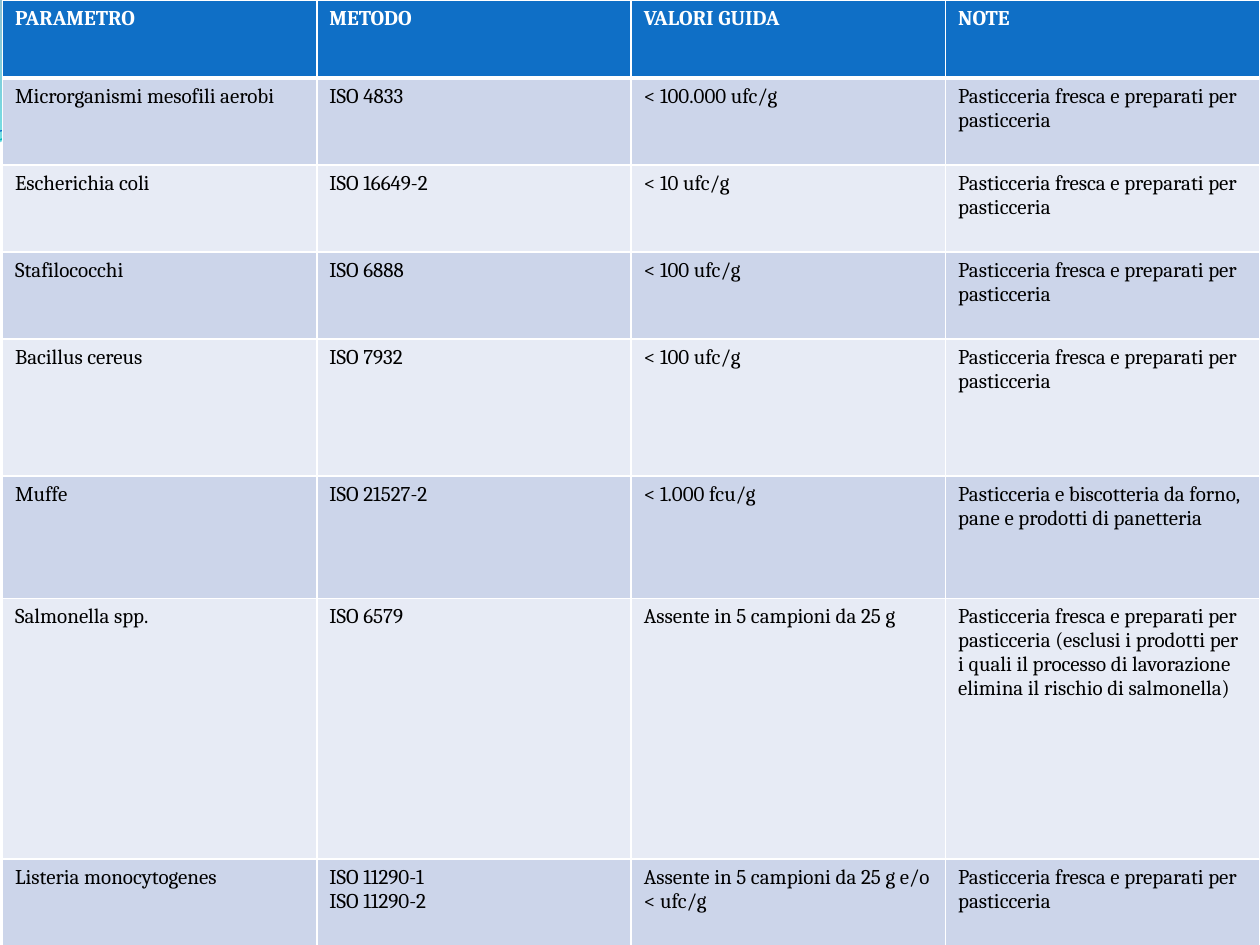
import dataclasses

import lxml.etree
import pptx
import pptx.dml.color
import pptx.oxml.ns
import pptx.util

Inches = pptx.util.Inches
qn = pptx.oxml.ns.qn


@dataclasses.dataclass(frozen=True)
class Theme:
    font: str = "Cambria"
    text_size: int = 12
    white: str = "FFFFFF"
    black: str = "000000"
    header: str = "0F6FC6"
    bands: tuple = ("CCD5EA", "E7EBF5")
    turquoise: str = "0AB8BF"
    thin: int = 1
    thick: int = 3


THEME = Theme()
FRESH = "Pasticceria fresca e preparati per pasticceria"
HEADINGS = ("PARAMETRO", "METODO", "VALORI GUIDA", "NOTE")
LIMITS = (
    ("Microrganismi mesofili aerobi", "ISO 4833", "< 100.000 ufc/g", FRESH),
    ("Escherichia coli", "ISO 16649-2", "< 10 ufc/g", FRESH),
    ("Stafilococchi", "ISO 6888", "< 100 ufc/g", FRESH),
    ("Bacillus cereus", "ISO 7932", "< 100 ufc/g", FRESH),
    ("Muffe", "ISO 21527-2", "< 1.000 fcu/g",
     "Pasticceria e biscotteria da forno, pane e prodotti di panetteria"),
    ("Salmonella spp.", "ISO 6579", "Assente in 5 campioni da 25 g",
     FRESH + " (esclusi i prodotti per i quali il processo di lavorazione "
     "elimina il rischio di salmonella)"),
    ("Listeria monocytogenes", "ISO 11290-1\nISO 11290-2",
     "Assente in 5 campioni da 25 g e/o < ufc/g", FRESH),
)
ROW_HEIGHTS = (0.62, 0.69, 0.69, 0.69, 1.09, 0.97, 2.07, 0.69)

# Wave outlines: a pair is a corner, a group of six is a Bézier curve
UPPER_WAVE = (
    (0, 0), (4.4, -0.01), (4.76, 0.17, 6.64, 0.63, 7.58, 0.63),
    (8.53, 0.63, 9.58, 0.26, 10, 0.09), (10.01, 0.36),
    (9.83, 0.44, 8.7, 0.76, 7.46, 0.75), (6.22, 0.75, 3.82, 0.28, 2.57, 0.34),
    (1.29, 0.36, 0.46, 0.83, -0.01, 1.13),
)
RIGHT_WAVE = (
    (4.79, -0.01), (5.09, 0.11, 6.82, 0.62, 7.69, 0.65),
    (8.56, 0.69, 9.61, 0.32, 10, 0.21), (10, 0),
)
WAVE_LINES = (
    (THEME.turquoise, 0.85,
     ((0, 1.11), (0.48, 0.93, 1.58, 0.57, 2.77, 0.52),
      (3.95, 0.47, 5.93, 0.89, 7.13, 0.8), (8.33, 0.71, 9.38, 0.15, 9.98, -0.02))),
    (THEME.header, 0.75,
     ((0, 1.04), (0.47, 0.96, 1.64, 0.61, 2.83, 0.56),
      (4.03, 0.51, 5.97, 0.84, 7.17, 0.75), (8.36, 0.67, 9.41, 0.21, 10, 0.06))),
)
# Gradient stops: position, colour, opacity in percent
WAVE_FILLS = (
    (UPPER_WAVE, ((0, "0074A1", 45), (1, "00C6CF", 55))),
    (RIGHT_WAVE, ((0, "00A1A9", 30), (0.8, "008BBF", 45))),
)


def rgb(code):
    return pptx.dml.color.RGBColor.from_string(code)


def add_outline(page, box, outline, close):
    """Draw a freeform through the part ends, then bend its curved parts."""
    left, top = box[:2]
    ends = [(left + Inches(part[-2]), top + Inches(part[-1])) for part in outline]
    builder = page.shapes.build_freeform(*ends[0], scale=1.0)
    builder.add_line_segments(ends[1:], close=close)
    shape = builder.convert_to_shape()
    shape.shadow.inherit = False
    segments = list(shape.element.spPr.iter(qn("a:lnTo")))
    for segment, part in zip(segments, outline[1:]):
        if len(part) == 2:
            continue
        curve = lxml.etree.Element(qn("a:cubicBezTo"))
        for x, y in zip(part[::2], part[1::2]):
            lxml.etree.SubElement(curve, qn("a:pt"),
                                  x=str(left + Inches(x) - shape.left),
                                  y=str(top + Inches(y) - shape.top))
        segment.getparent().replace(segment, curve)
    return shape


def add_waves(page, box):
    # Translucent bands
    for outline, stops in WAVE_FILLS:
        wave = add_outline(page, box, outline, True)
        wave.line.fill.background()
        wave.fill.gradient()
        wave.fill.gradient_angle = 270
        for stop, (position, colour, opacity) in zip(wave.fill.gradient_stops, stops):
            stop.position = position
            stop.color.rgb = rgb(colour)
        colours = wave.element.spPr.iter(qn("a:srgbClr"))
        for node, (position, colour, opacity) in zip(colours, stops):
            lxml.etree.SubElement(node, qn("a:alpha"), val=str(opacity * 1000))
    # Thin lines
    for colour, width, outline in WAVE_LINES:
        line = add_outline(page, box, outline, False)
        line.fill.background()
        line.line.color.rgb = rgb(colour)
        line.line.width = pptx.util.Pt(width)


def set_borders(cell, top, bottom):
    props = cell._tc.get_or_add_tcPr()
    sides = (("L", THEME.thin), ("R", THEME.thin), ("T", top), ("B", bottom))
    for index, (side, width) in enumerate(sides):
        line = lxml.etree.Element(qn("a:ln" + side), w=str(pptx.util.Pt(width)))
        solid = lxml.etree.SubElement(line, qn("a:solidFill"))
        lxml.etree.SubElement(solid, qn("a:srgbClr"), val=THEME.white)
        props.insert(index, line)


def write_cell(cell, text, colour, bold):
    frame = cell.text_frame
    for index, words in enumerate(text.split("\n")):
        para = frame.add_paragraph() if index else frame.paragraphs[0]
        span = para.add_run()
        span.text = words
        span.font.name = THEME.font
        span.font.size = pptx.util.Pt(THEME.text_size)
        span.font.bold = bold
        span.font.color.rgb = rgb(colour)


def add_limits_table(page, box):
    rows = (HEADINGS, *LIMITS)
    table = page.shapes.add_table(len(rows), len(HEADINGS), *box).table
    for column in table.columns:
        column.width = box[2] // len(HEADINGS)
    for number, (texts, height) in enumerate(zip(rows, ROW_HEIGHTS)):
        table.rows[number].height = Inches(height)
        heading = number == 0
        fill = THEME.header if heading else THEME.bands[(number - 1) % 2]
        for cell, text in zip(table.rows[number].cells, texts):
            cell.fill.solid()
            cell.fill.fore_color.rgb = rgb(fill)
            set_borders(cell, THEME.thick if number == 1 else THEME.thin,
                        THEME.thick if heading else THEME.thin)
            write_cell(cell, text, THEME.white if heading else THEME.black, heading)


def main():
    deck = pptx.Presentation()
    deck.slide_width, deck.slide_height = Inches(10), Inches(7.5)
    page = deck.slides.add_slide(deck.slide_layouts[6])
    page.background.fill.solid()
    page.background.fill.fore_color.rgb = rgb(THEME.white)
    add_waves(page, (0, 0, deck.slide_width, Inches(1.13)))
    add_limits_table(page, (Inches(0.02), 0, Inches(9.98), Inches(sum(ROW_HEIGHTS))))
    deck.save("out.pptx")


if __name__ == "__main__":
    main()
